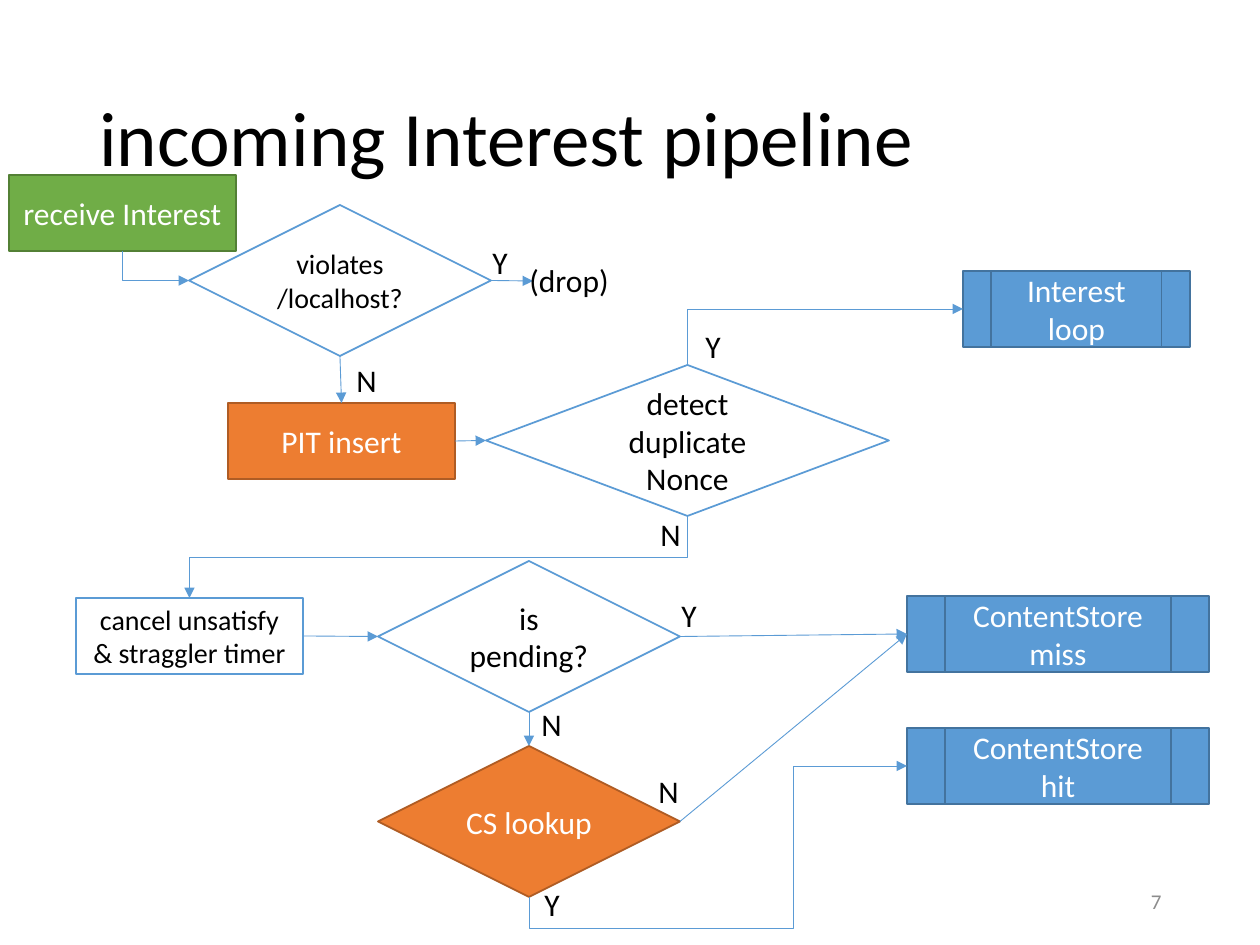
from lxml import etree
from pptx import Presentation
from pptx import util as u
from pptx.dml.color import RGBColor
from pptx.enum import shapes, text
from pptx.oxml.ns import qn

PX = 914400 / 126
FONT = "Calibri"
COLORS = {
    "black": "000000", "white": "FFFFFF", "grey": "8C8C8C",
    "blue": "5B9BD5", "blue_edge": "43739E",
    "orange": "ED7D31", "orange_edge": "AF5C24",
    "green": "70AD47", "green_edge": "538035",
}
RECT = shapes.MSO_SHAPE.RECTANGLE
DECISION = shapes.MSO_SHAPE.FLOWCHART_DECISION
PROCESS = shapes.MSO_SHAPE.FLOWCHART_PREDEFINED_PROCESS
TOP, LEFT, BOTTOM, RIGHT = range(4)

# name: preset, x, y, width, height, words, size, (fill, line, font)
PLAIN = ("white", "blue", "black")
ORANGE = ("orange", "orange_edge", "white")
BLUE = ("blue", "blue_edge", "white")
GREEN = ("green", "green_edge", "white")
NODES = {
    "receive": (RECT, 0, 0, 227, 76, "receive Interest", 18, GREEN),
    "localhost": (DECISION, 180, 30, 302, 151, "violates /localhost?", 16, PLAIN),
    "insert": (RECT, 219, 228, 227, 76, "PIT insert", 18, ORANGE),
    "duplicate": (DECISION, 477, 190, 403, 151, "detect duplicate Nonce", 18, PLAIN),
    "loop": (PROCESS, 954, 96, 227, 76, "Interest loop", 18, BLUE),
    "cancel": (RECT, 67, 423, 227, 76, "cancel unsatisfy & straggler timer", 16, PLAIN),
    "pending": (DECISION, 369, 386, 302, 151, "is pending?", 18, PLAIN),
    "lookup": (DECISION, 369, 571, 302, 151, "CS lookup", 18, ORANGE),
    "miss": (PROCESS, 898, 421, 302, 76, "ContentStore miss", 18, BLUE),
    "hit": (PROCESS, 898, 553, 302, 76, "ContentStore hit", 18, BLUE),
}
STRAIGHT = [
    ("localhost", BOTTOM, "insert", TOP),
    ("insert", RIGHT, "duplicate", LEFT),
    ("cancel", RIGHT, "pending", LEFT),
    ("pending", BOTTOM, "lookup", TOP),
    ("pending", RIGHT, "miss", LEFT),
    ("lookup", RIGHT, "miss", LEFT),
]
# Elbows leave vertically: from, side, to, side, preset, adjustments
ELBOWS = [
    ("receive", BOTTOM, "localhost", LEFT, "bentConnector2", ()),
    ("duplicate", TOP, "loop", LEFT, "bentConnector2", ()),
    ("duplicate", BOTTOM, "cancel", TOP, "bentConnector3", (50000,)),
    ("lookup", BOTTOM, "hit", LEFT, "bentConnector4", (-24100, 70000)),
]
LABELS = [
    ("Y", 471, 62, 40), ("(drop)", 508, 80, 106), ("N", 335, 180, 45),
    ("Y", 684, 146, 40), ("N", 639, 334, 45), ("Y", 660, 415, 40),
    ("N", 520, 524, 45), ("N", 637, 591, 45), ("Y", 523, 704, 40),
]
DROP_TIP = (524, 106)


def px(value):
    return u.Emu(round(value * PX))


def rgb(name):
    return RGBColor.from_string(COLORS[name])


def write(shape, words, size=18, color="black", align=text.PP_ALIGN.LEFT,
          anchor=text.MSO_ANCHOR.TOP, wrap=True, spacing=None):
    frame = shape.text_frame
    frame.word_wrap = wrap
    frame.vertical_anchor = anchor
    para = frame.paragraphs[0]
    para.alignment = align
    para.line_spacing = spacing
    span = para.add_run()
    span.text = words
    span.font.name = FONT
    span.font.size = u.Pt(size)
    span.font.color.rgb = rgb(color)


def add_text(page, box, words, **form):
    write(page.shapes.add_textbox(*map(px, box)), words, **form)


def add_node(page, origin, preset, x, y, width, height, words, size, colors):
    fill, line, font = colors
    box = (origin[0] + x, origin[1] + y, width, height)
    node = page.shapes.add_shape(preset, *map(px, box))
    node.shadow.inherit = False
    node.fill.solid()
    node.fill.fore_color.rgb = rgb(fill)
    node.line.color.rgb = rgb(line)
    node.line.width = u.Pt(1)
    write(node, words, size=size, color=font, align=text.PP_ALIGN.CENTER,
          anchor=text.MSO_ANCHOR.MIDDLE)
    return node


def side_point(node, side):
    across = {TOP: 1, LEFT: 0, BOTTOM: 1, RIGHT: 2}[side]
    down = {TOP: 0, LEFT: 1, BOTTOM: 2, RIGHT: 1}[side]
    return node.left + node.width * across // 2, node.top + node.height * down // 2


def add_arrow(page, start, end, kind=shapes.MSO_CONNECTOR.STRAIGHT):
    arrow = page.shapes.add_connector(kind, *start, *end)
    arrow.line.color.rgb = rgb("blue")
    arrow.line.width = u.Pt(0.5)
    etree.SubElement(arrow.line._get_or_add_ln(), qn("a:tailEnd"), type="triangle")
    etree.SubElement(arrow._element.spPr, qn("a:effectLst"))
    return arrow


def add_elbow(page, start, end, preset, adjustments):
    """A quarter turn makes the first leg vertical; flips set its direction."""
    arrow = add_arrow(page, start, end, shapes.MSO_CONNECTOR.ELBOW)
    across, down = end[0] - start[0], end[1] - start[1]
    arrow.width, arrow.height = abs(down), abs(across)
    arrow.left = (start[0] + end[0] - arrow.width) // 2
    arrow.top = (start[1] + end[1] - arrow.height) // 2
    frame = arrow._element.spPr.find(qn("a:xfrm"))
    frame.set("rot", "5400000")
    frame.set("flipH", str(int(down < 0)))
    frame.set("flipV", str(int(across > 0)))
    geometry = arrow._element.spPr.find(qn("a:prstGeom"))
    geometry.set("prst", preset)
    guides = geometry.find(qn("a:avLst"))
    for number, value in enumerate(adjustments, 1):
        etree.SubElement(guides, qn("a:gd"), name=f"adj{number}", fmla=f"val {value}")


def draw_title(page, box):
    add_text(page, box, "incoming Interest pipeline", size=44,
             anchor=text.MSO_ANCHOR.MIDDLE, spacing=0.9)


def draw_number(page, box):
    add_text(page, box, "7", size=12, color="grey", align=text.PP_ALIGN.RIGHT,
             anchor=text.MSO_ANCHOR.MIDDLE)


def draw_pipeline(page, box):
    left, top = box[:2]
    # Steps
    nodes = {name: add_node(page, (left, top), *parts) for name, parts in NODES.items()}

    # Arrows
    for source, out_side, target, in_side in STRAIGHT:
        first, last = nodes[source], nodes[target]
        arrow = add_arrow(page, side_point(first, out_side), side_point(last, in_side))
        arrow.begin_connect(first, out_side)
        arrow.end_connect(last, in_side)
    for source, out_side, target, in_side, preset, adjustments in ELBOWS:
        add_elbow(page, side_point(nodes[source], out_side),
                  side_point(nodes[target], in_side), preset, adjustments)
    check = nodes["localhost"]
    tip = (px(left + DROP_TIP[0]), px(top + DROP_TIP[1]))
    add_arrow(page, side_point(check, RIGHT), tip).begin_connect(check, RIGHT)

    # Branch labels
    for words, x, y, width in LABELS:
        add_text(page, (left + x, top + y, width, 50), words, wrap=False)


def main():
    deck = Presentation()
    deck.slide_width, deck.slide_height = px(1260), px(945)
    page = deck.slides.add_slide(deck.slide_layouts[6])
    draw_title(page, (87, 50, 1086, 183))
    draw_number(page, (890, 876, 284, 50))
    draw_pipeline(page, (9, 175, 1200, 762))
    deck.save("out.pptx")


if __name__ == "__main__":
    main()
